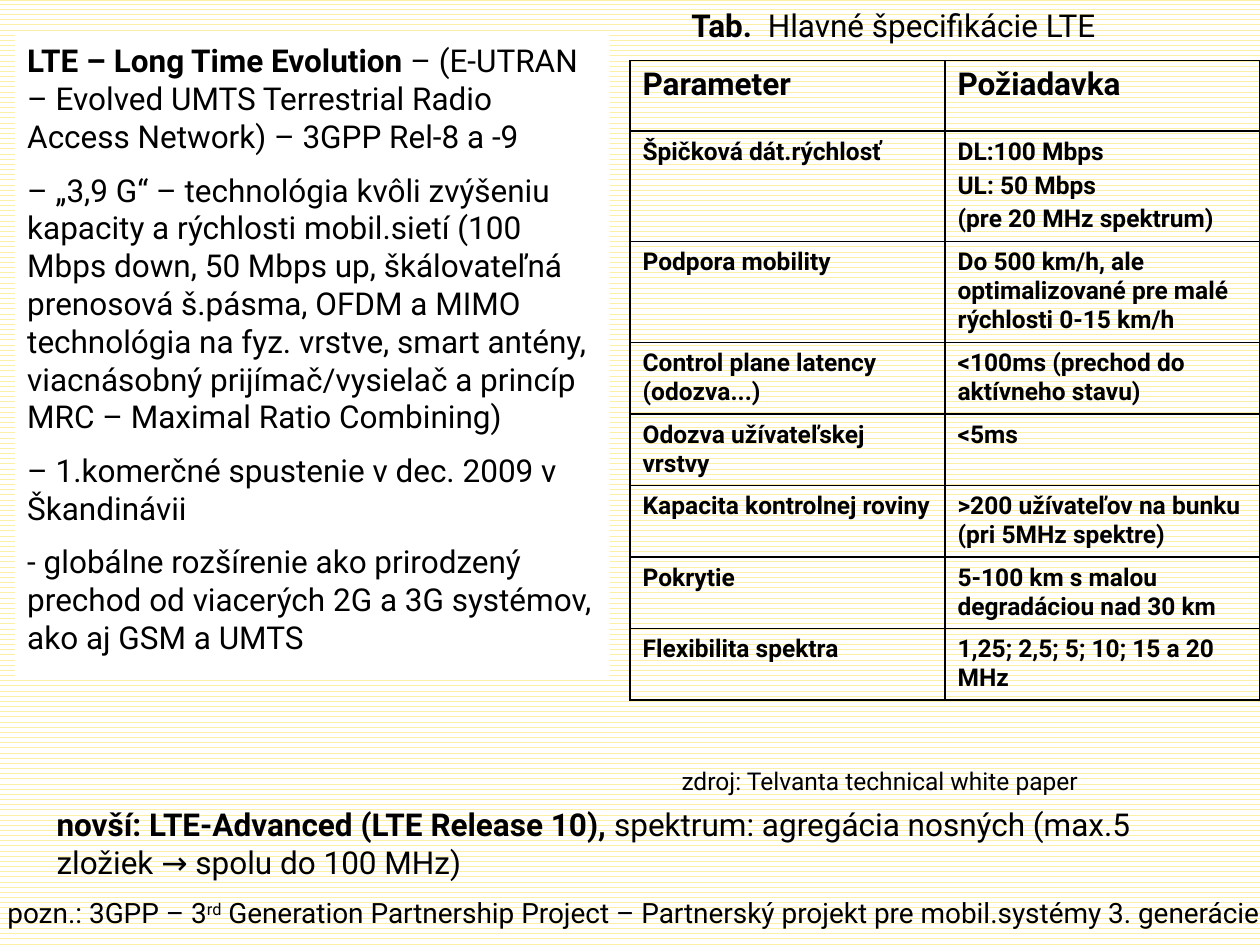
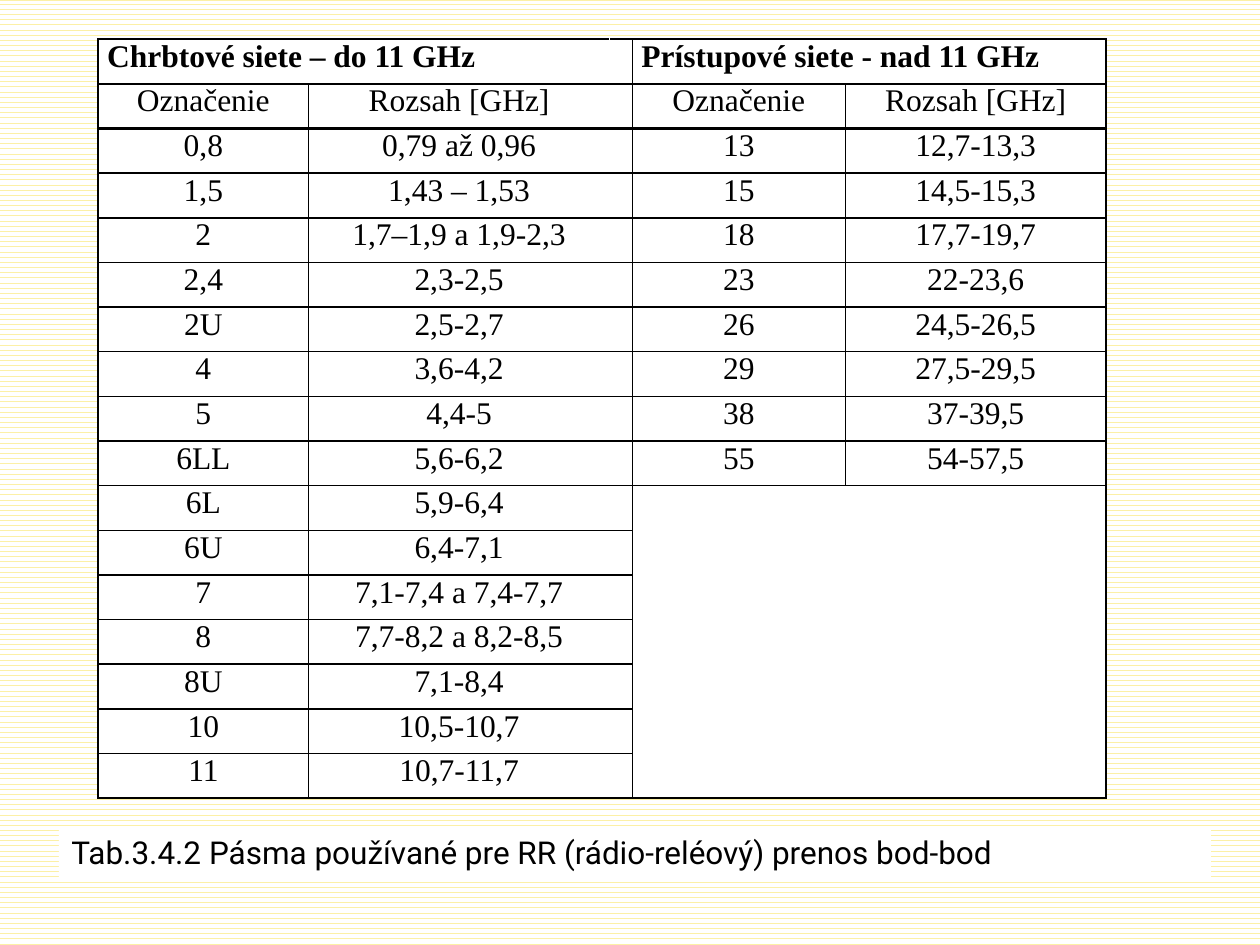
"""Build two slides on LTE requirements and radio-relay frequency bands."""
from lxml import etree
from pptx import Presentation
from pptx import util as u
from pptx.dml.color import RGBColor
from pptx.enum import dml, text
from pptx.oxml import ns

BLACK, WHITE, YELLOW = "000000", "FFFFFF", "FCF0A6"
SANS, SERIF = "Roboto", "Times New Roman"


def add_text(page, place, paragraphs, size=18, fill=None):
    """Add a text box whose paragraphs are lists of (words, bold) spans."""
    box = page.shapes.add_textbox(*map(u.Cm, place))
    if fill:
        box.fill.solid()
        box.fill.fore_color.rgb = RGBColor.from_string(fill)
    frame = box.text_frame
    frame.word_wrap = True
    for index, spans in enumerate(paragraphs):
        para = frame.add_paragraph() if index else frame.paragraphs[0]
        if index:
            para.space_before = u.Pt(size / 2)
        para.font.size = u.Pt(size)
        para.font.name = SANS
        para.font.color.rgb = RGBColor.from_string(BLACK)
        for words, bold in spans:
            span = para.add_run()
            span.text = words
            span.font.bold = bold
    return box


def fill_cell(cell, words, size, font, bold, fill=None, edges=None):
    """Write a cell and draw its borders; edges maps a side to (colour, points)."""
    cell.text = words
    for index, para in enumerate(cell.text_frame.paragraphs):
        if index:
            para.space_before = u.Pt(size / 5)
        para.font.size = u.Pt(size)
        para.font.name = font
        para.font.bold = bold
        para.font.color.rgb = RGBColor.from_string(BLACK)
    properties = cell._tc.get_or_add_tcPr()
    for side in "LRTB":
        colour, points = (edges or {}).get(side, (BLACK, 1))
        line = etree.SubElement(properties, ns.qn(f"a:ln{side}"), w=str(u.Pt(points)))
        solid = etree.SubElement(line, ns.qn("a:solidFill"))
        etree.SubElement(solid, ns.qn("a:srgbClr"), val=colour)
    if fill:
        cell.fill.solid()
        cell.fill.fore_color.rgb = RGBColor.from_string(fill)
    else:
        cell.fill.background()


deck = Presentation()
deck.slide_width, deck.slide_height = u.Cm(25.4), u.Cm(19.05)
backdrop = deck.slide_master.background.fill
backdrop.patterned()
backdrop.pattern = dml.MSO_PATTERN.DARK_HORIZONTAL
backdrop.fore_color.rgb = RGBColor.from_string(WHITE)
backdrop.back_color.rgb = RGBColor.from_string(YELLOW)
blank = deck.slide_layouts[6]

lte_page = deck.slides.add_slide(blank)
add_text(lte_page, (0.3, 0.71, 11.99, 12.95), [
    [("LTE – Long Time Evolution", True),
     (" – (E-UTRAN – Evolved UMTS Terrestrial Radio Access Network) – 3GPP Rel-8 a -9", False)],
    [("– „3,9 G“ – technológia kvôli zvýšeniu kapacity a rýchlosti mobil.sietí "
      "(100 Mbps down, 50 Mbps up, škálovateľná prenosová š.pásma, OFDM a MIMO "
      "technológia na fyz. vrstve, smart antény, viacnásobný prijímač/vysielač "
      "a princíp MRC – Maximal Ratio Combining)", False)],
    [("– 1.komerčné spustenie v dec. 2009 v Škandinávii", False)],
    [("- globálne rozšírenie ako prirodzený prechod od viacerých 2G a 3G systémov, "
      "ako aj GSM a UMTS", False)],
], fill=WHITE)
add_text(lte_page, (13.49, 15.32, 11.4, 0.84),
         [[("zdroj: Telvanta technical white paper", False)]], size=14)
note = add_text(lte_page, (-0.1, 17.93, 25.91, 0.94), [[
    ("pozn.: 3GPP – 3", False), ("rd", False),
    (" Generation Partnership Project – Partnerský projekt pre mobil.systémy 3. generácie", False),
]], size=16)
ordinal = note.text_frame.paragraphs[0].runs[1]
ordinal._r.get_or_add_rPr().set("baseline", "30000")
add_text(lte_page, (13.69, 0, 11.71, 1.02),
         [[("Tab. ", True), (" Hlavné špecifikácie LTE", False)]])

requirements = [
    ("Parameter", "Požiadavka"),
    ("Špičková dát.rýchlosť", "DL:100 Mbps\nUL: 50 Mbps\n(pre 20 MHz spektrum)"),
    ("Podpora mobility", "Do 500 km/h, ale optimalizované pre malé rýchlosti 0-15 km/h"),
    ("Control plane latency (odozva...)", "<100ms (prechod do aktívneho stavu)"),
    ("Odozva užívateľskej vrstvy", "<5ms"),
    ("Kapacita kontrolnej roviny", ">200 užívateľov na bunku (pri 5MHz spektre)"),
    ("Pokrytie", "5-100 km s malou degradáciou nad 30 km"),
    ("Flexibilita spektra", "1,25; 2,5; 5; 10; 15 a 20 MHz"),
]
lte_table = lte_page.shapes.add_table(
    len(requirements), 2, u.Cm(12.7), u.Cm(1.22), u.Cm(12.7), u.Cm(1.42 * len(requirements))).table
lte_table.first_row = lte_table.horz_banding = False
for row, entries in enumerate(requirements):
    for column, words in enumerate(entries):
        fill_cell(lte_table.cell(row, column), words, 14 if row else 18, SANS, True)

add_text(lte_page, (0.89, 16.1, 23.19, 1.8), [[
    ("novší: LTE-Advanced (LTE Release 10), ", True),
    ("spektrum: agregácia nosných (max.5 zložiek → spolu do 100 MHz)", False),
]])

bands_page = deck.slides.add_slide(blank)
add_text(bands_page, (1.19, 16.66, 23.22, 1.02),
         [[("Tab.3.4.2 Pásma používané pre RR (rádio-reléový) prenos bod-bod", False)]], fill=WHITE)

backbone = [
    ("Chrbtové siete – do 11 GHz", ""), ("Označenie", "Rozsah [GHz]"),
    ("0,8", "0,79 až 0,96"), ("1,5", "1,43 – 1,53"), ("2", "1,7–1,9 a 1,9-2,3"),
    ("2,4", "2,3-2,5"), ("2U", "2,5-2,7"), ("4", "3,6-4,2"), ("5", "4,4-5"),
    ("6LL", "5,6-6,2"), ("6L", "5,9-6,4"), ("6U", "6,4-7,1"), ("7", "7,1-7,4 a 7,4-7,7"),
    ("8", "7,7-8,2 a 8,2-8,5"), ("8U", "7,1-8,4"), ("10", "10,5-10,7"), ("11", "10,7-11,7"),
]
access = [
    ("Prístupové siete - nad 11 GHz", ""), ("Označenie", "Rozsah [GHz]"),
    ("13", "12,7-13,3"), ("15", "14,5-15,3"), ("18", "17,7-19,7"), ("23", "22-23,6"),
    ("26", "24,5-26,5"), ("29", "27,5-29,5"), ("38", "37-39,5"), ("55", "54-57,5"),
]
last = len(backbone) - 1
bands_table = bands_page.shapes.add_table(
    len(backbone), 5, u.Cm(1.98), u.Cm(0.79), u.Cm(20.32), u.Cm(0.9 * len(backbone))).table
bands_table.first_row = bands_table.horz_banding = False
for column, width in zip(bands_table.columns, (4.24, 6.07, 0.46, 4.29, 5.26)):
    column.width = u.Cm(width)
for first, final in (((0, 0), (0, 1)), ((0, 3), (0, 4)), ((len(access), 3), (last, 4))):
    bands_table.cell(*first).merge(bands_table.cell(*final))

for row, pair in enumerate(backbone):
    access_pair = access[row] if row < len(access) else ("", "")
    for column, words in enumerate((*pair, "", *access_pair)):
        cell = bands_table.cell(row, column)
        cell.margin_left = cell.margin_right = u.Cm(0.18)
        cell.margin_top = cell.margin_bottom = 0
        edges = {}
        if row in (1, 2):
            edges["B" if row == 1 else "T"] = (BLACK, 1.5)
        if column == 1 or (row, column) == (0, 0):
            edges["R"] = (WHITE, 1)
        if column == 2:
            edges["L"] = (WHITE, 1)
        fill_cell(cell, words, 18, SERIF, row == 0, WHITE, edges)
        if row:
            cell.text_frame.paragraphs[0].alignment = text.PP_ALIGN.CENTER

deck.save("out.pptx")
